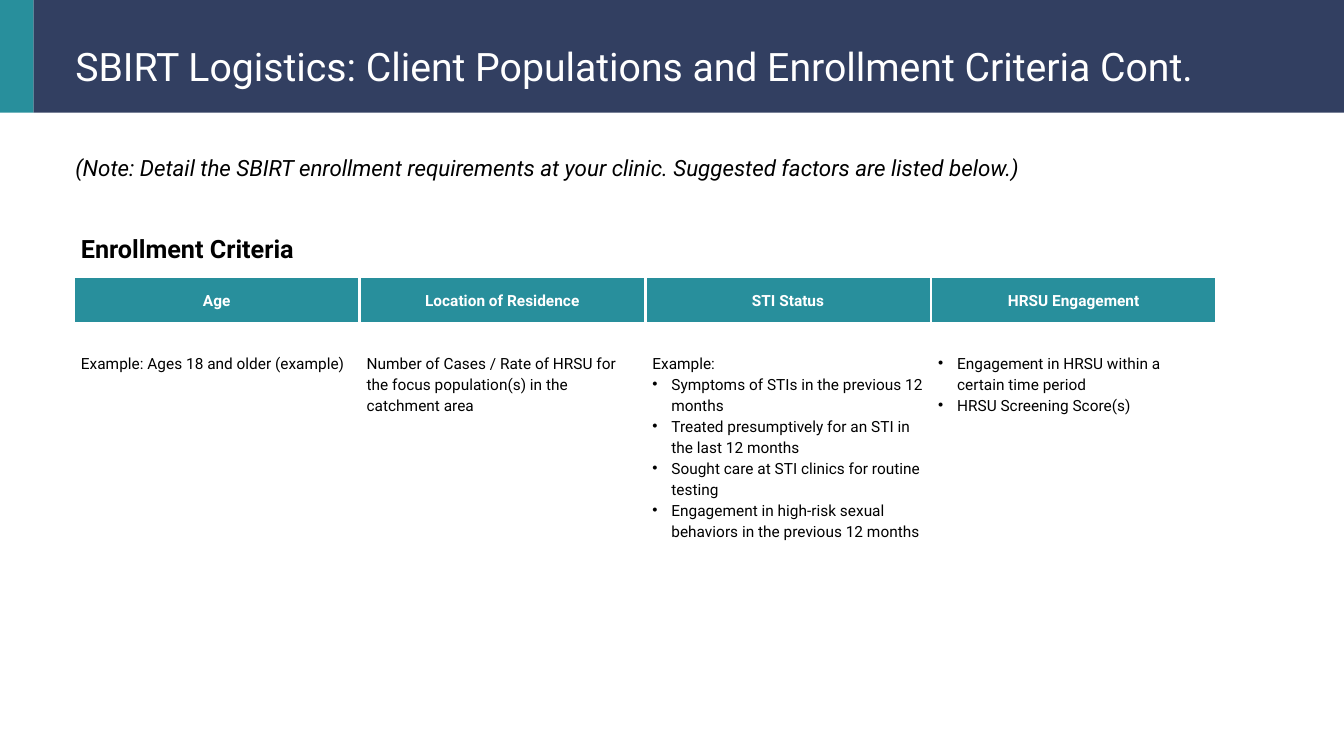
from lxml import etree
from pptx import Presentation
from pptx.dml.color import RGBColor
from pptx.enum.shapes import MSO_SHAPE
from pptx.enum.text import MSO_ANCHOR, PP_ALIGN
from pptx.oxml.ns import qn
from pptx.util import Cm, Pt

RECTANGLE = MSO_SHAPE.RECTANGLE
MIDDLE, TOP = MSO_ANCHOR.MIDDLE, MSO_ANCHOR.TOP
CENTER, LEFT = PP_ALIGN.CENTER, PP_ALIGN.LEFT

NAVY = RGBColor(0x32, 0x3F, 0x61)
TEAL = RGBColor(0x28, 0x8F, 0x9C)
WHITE = RGBColor(0xFF, 0xFF, 0xFF)
BLACK = RGBColor(0, 0, 0)

FONT = "Roboto"
BULLET = "•"
BULLET_INDENT = Cm(0.48)
LINE_HEIGHT = Pt(15)
BANNER_HEIGHT = Cm(2.84)
ACCENT_WIDTH = Cm(0.84)
TEXT_LEFT = Cm(1.65)
COLUMN_WIDTH = Cm(7.2)
ROW_HEIGHTS = [Cm(1.37), Cm(1.14), Cm(0.53), Cm(6.86)]

CRITERIA = {
    "Age": ["Example: Ages 18 and older (example)"],
    "Location of Residence": [
        "Number of Cases / Rate of HRSU for the focus population(s) in the catchment area",
    ],
    "STI Status": [
        "Example:",
        "• Symptoms of STIs in the previous 12 months",
        "• Treated presumptively for an STI in the last 12 months",
        "• Sought care at STI clinics for routine testing",
        "• Engagement in high-risk sexual behaviors in the previous 12 months",
    ],
    "HRSU Engagement": [
        "• Engagement in HRSU within a certain time period",
        "• HRSU Screening Score(s)",
    ],
}


def add_run(paragraph, text, size, color, **formats):
    run = paragraph.add_run()
    run.text = text
    run.font.color.rgb = color
    for name, value in {"name": FONT, "size": Pt(size), **formats}.items():
        setattr(run.font, name, value)


def add_band(slide, left, width, color):
    band = slide.shapes.add_shape(RECTANGLE, left, 0, width, BANNER_HEIGHT)
    band.shadow.inherit = False
    band.fill.solid()
    band.fill.fore_color.rgb = color
    band.line.fill.background()


def add_text(slide, top, width, height, text, size, color, **formats):
    frame = slide.shapes.add_textbox(TEXT_LEFT, top, width, height).text_frame
    frame.word_wrap = True
    add_run(frame.paragraphs[0], text, size, color, **formats)


def add_bullet(paragraph):
    properties = paragraph._p.get_or_add_pPr()
    properties.set("marL", str(BULLET_INDENT))
    properties.set("indent", str(-BULLET_INDENT))
    etree.SubElement(properties, qn("a:buChar")).set("char", BULLET)


def set_borders(cell):
    """Draw white cell edges, thicker at the sides to part the columns."""
    properties = cell._tc.get_or_add_tcPr()
    widths = {"a:lnL": 2.25, "a:lnR": 2.25, "a:lnT": 1, "a:lnB": 1}
    for position, (edge, width) in enumerate(widths.items()):
        line = etree.Element(qn(edge), w=str(Pt(width)))
        fill = etree.SubElement(line, qn("a:solidFill"))
        etree.SubElement(fill, qn("a:srgbClr")).set("val", str(WHITE))
        properties.insert(position, line)


def fill_cell(cell, lines, background=WHITE, color=BLACK, size=11, bold=False,
              align=LEFT, anchor=TOP, line_height=LINE_HEIGHT):
    formats = {"margin_left": Cm(0.18), "margin_right": Cm(0.18), "margin_top": 0,
               "margin_bottom": 0, "vertical_anchor": anchor}
    for name, value in formats.items():
        setattr(cell, name, value)
    cell.fill.solid()
    cell.fill.fore_color.rgb = background
    set_borders(cell)
    frame = cell.text_frame
    for index, line in enumerate(lines):
        paragraph = frame.add_paragraph() if index else frame.paragraphs[0]
        paragraph.alignment = align
        paragraph.line_spacing = line_height
        if line.startswith(BULLET):
            add_bullet(paragraph)
        if line:
            add_run(paragraph, line.removeprefix(BULLET).strip(), size, color, bold=bold)


def add_criteria_table(slide):
    count = len(CRITERIA)
    table = slide.shapes.add_table(len(ROW_HEIGHTS), count, Cm(1.86), Cm(5.61),
                                   COLUMN_WIDTH * count, sum(ROW_HEIGHTS)).table
    table.first_row = table.horz_banding = False
    for row, height in zip(table.rows, ROW_HEIGHTS):
        row.height = height
    table.cell(0, 0).merge(table.cell(0, count - 1))
    fill_cell(table.cell(0, 0), ["Enrollment Criteria"], size=18, bold=True,
              anchor=MIDDLE, line_height=None)
    for column, (heading, details) in enumerate(CRITERIA.items()):
        table.columns[column].width = COLUMN_WIDTH
        fill_cell(table.cell(1, column), [heading], TEAL, WHITE, bold=True,
                  align=CENTER, anchor=MIDDLE)
        fill_cell(table.cell(2, column), [""])
        fill_cell(table.cell(3, column), details)


def main():
    deck = Presentation()
    deck.slide_width, deck.slide_height = Cm(33.87), Cm(19.05)
    slide = deck.slides.add_slide(deck.slide_layouts[6])
    add_band(slide, ACCENT_WIDTH, deck.slide_width - ACCENT_WIDTH, NAVY)
    add_band(slide, 0, ACCENT_WIDTH, TEAL)
    add_text(slide, Cm(0.94), Cm(31.62), Cm(1.45),
             "SBIRT Logistics: Client Populations and Enrollment Criteria Cont.", 28, WHITE)
    add_text(slide, Cm(3.76), Cm(30.5), Cm(0.94),
             "(Note: Detail the SBIRT enrollment requirements at your clinic. "
             "Suggested factors are listed below.)", 16, BLACK, italic=True)
    add_criteria_table(slide)
    deck.save("out.pptx")


if __name__ == "__main__":
    main()
